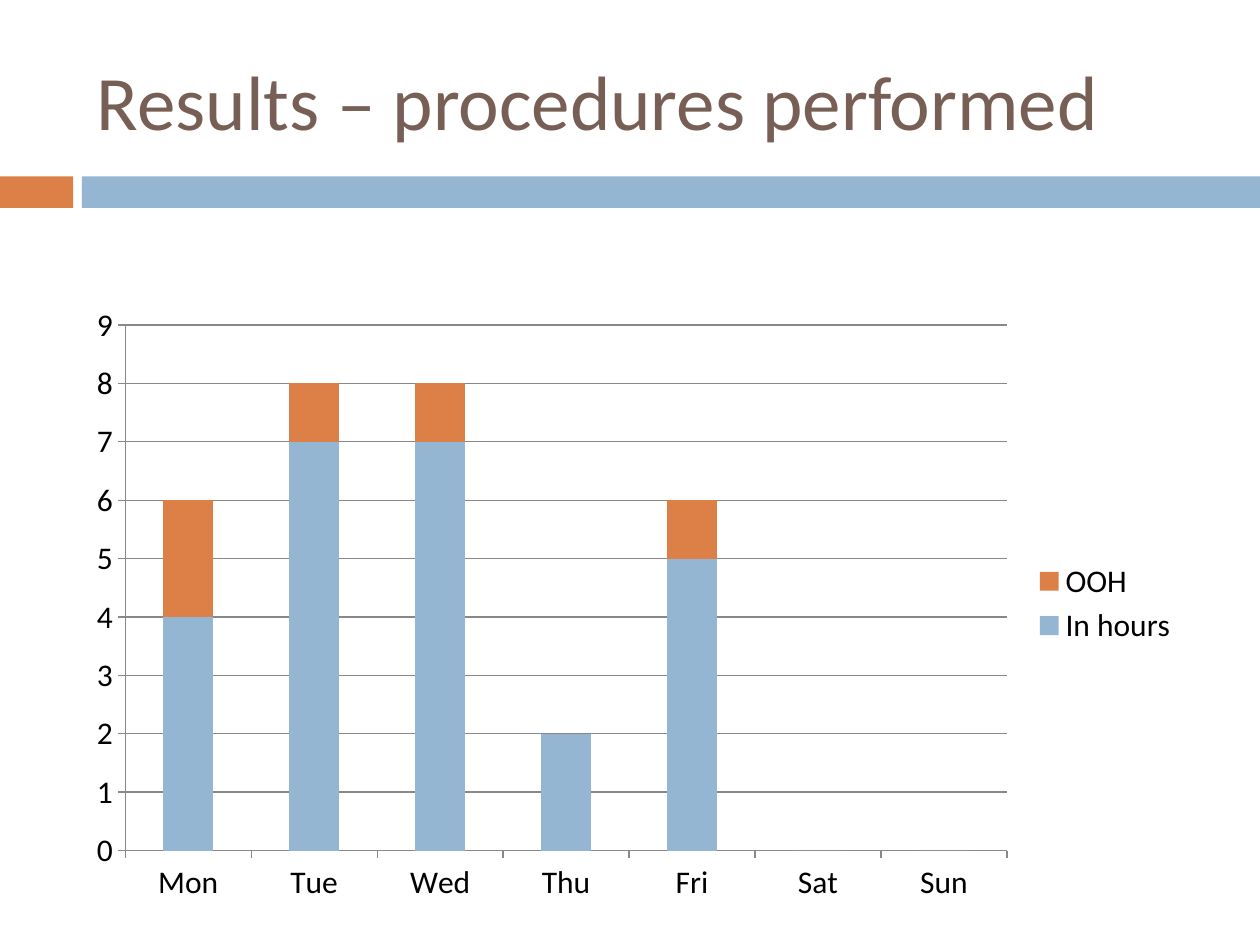
from pptx import Presentation
from pptx.chart.data import CategoryChartData
from pptx.dml.color import RGBColor
from pptx.enum.chart import XL_CHART_TYPE, XL_LEGEND_POSITION, XL_TICK_MARK
from pptx.enum.shapes import MSO_SHAPE
from pptx.enum.text import MSO_ANCHOR
from pptx.util import Inches, Pt

FONT = "Calibri"
BLUE, ORANGE, BROWN, GREY, BLACK = "94B6D2", "DD8047", "775F55", "888888", "000000"


def color(code):
    return RGBColor.from_string(code)


class Deck:
    def __init__(self, wide, high):
        self.file = Presentation()
        self.file.slide_width, self.file.slide_height = Inches(wide), Inches(high)
        self.slide = self.file.slides.add_slide(self.file.slide_layouts[6])

    def style(self, font, size, code):
        font.name, font.size = FONT, Pt(size)
        font.color.rgb = color(code)

    def bar(self, box, code):
        shape = self.slide.shapes.add_shape(MSO_SHAPE.RECTANGLE, *map(Inches, box))
        shape.shadow.inherit = False
        shape.fill.solid()
        shape.fill.fore_color.rgb = color(code)
        shape.line.fill.background()

    def title(self, box, text):
        frame = self.slide.shapes.add_textbox(*map(Inches, box)).text_frame
        frame.word_wrap = True
        frame.vertical_anchor = MSO_ANCHOR.MIDDLE
        frame.text = text
        self.style(frame.paragraphs[0].runs[0].font, 44, BROWN)

    def stack(self, box, days, series):
        data = CategoryChartData()
        data.categories = days
        for name, counts, code in series:
            data.add_series(name, counts)
        chart = self.slide.shapes.add_chart(
            XL_CHART_TYPE.COLUMN_STACKED, *map(Inches, box), data
        ).chart
        self.style(chart.font, 18, BLACK)
        chart.has_title = False
        chart.has_legend = True
        chart.legend.position = XL_LEGEND_POSITION.RIGHT
        chart.legend.include_in_layout = False
        plot = chart.plots[0]
        plot.gap_width, plot.overlap = 150, 100
        plot.vary_by_categories = False
        for part, (name, counts, code) in zip(plot.series, series):
            part.format.fill.solid()
            part.format.fill.fore_color.rgb = color(code)
        value = chart.value_axis
        value.minimum_scale, value.maximum_scale, value.major_unit = 0, 9, 1
        value.has_major_gridlines = True
        for axis in (value, chart.category_axis):
            axis.major_tick_mark = XL_TICK_MARK.OUTSIDE
            axis.minor_tick_mark = XL_TICK_MARK.NONE
        for item in (value, chart.category_axis, value.major_gridlines):
            item.format.line.color.rgb = color(GREY)
            item.format.line.width = Pt(0.75)


def main():
    deck = Deck(10, 7.5)
    deck.bar((0, 1.4, 0.58, 0.25), ORANGE)
    deck.bar((0.65, 1.4, 9.35, 0.25), BLUE)
    deck.title((0.67, 0.25, 8.92, 1.08), "Results – procedures performed")
    deck.stack(
        (0.59, 2.33, 8.92, 4.92),
        ["Mon", "Tue", "Wed", "Thu", "Fri", "Sat", "Sun"],
        [
            ("In hours ", (4, 7, 7, 2, 5, 0, 0), BLUE),
            ("OOH", (2, 1, 1, 0, 1, 0, 0), ORANGE),
        ],
    )
    deck.file.save("out.pptx")


if __name__ == "__main__":
    main()
